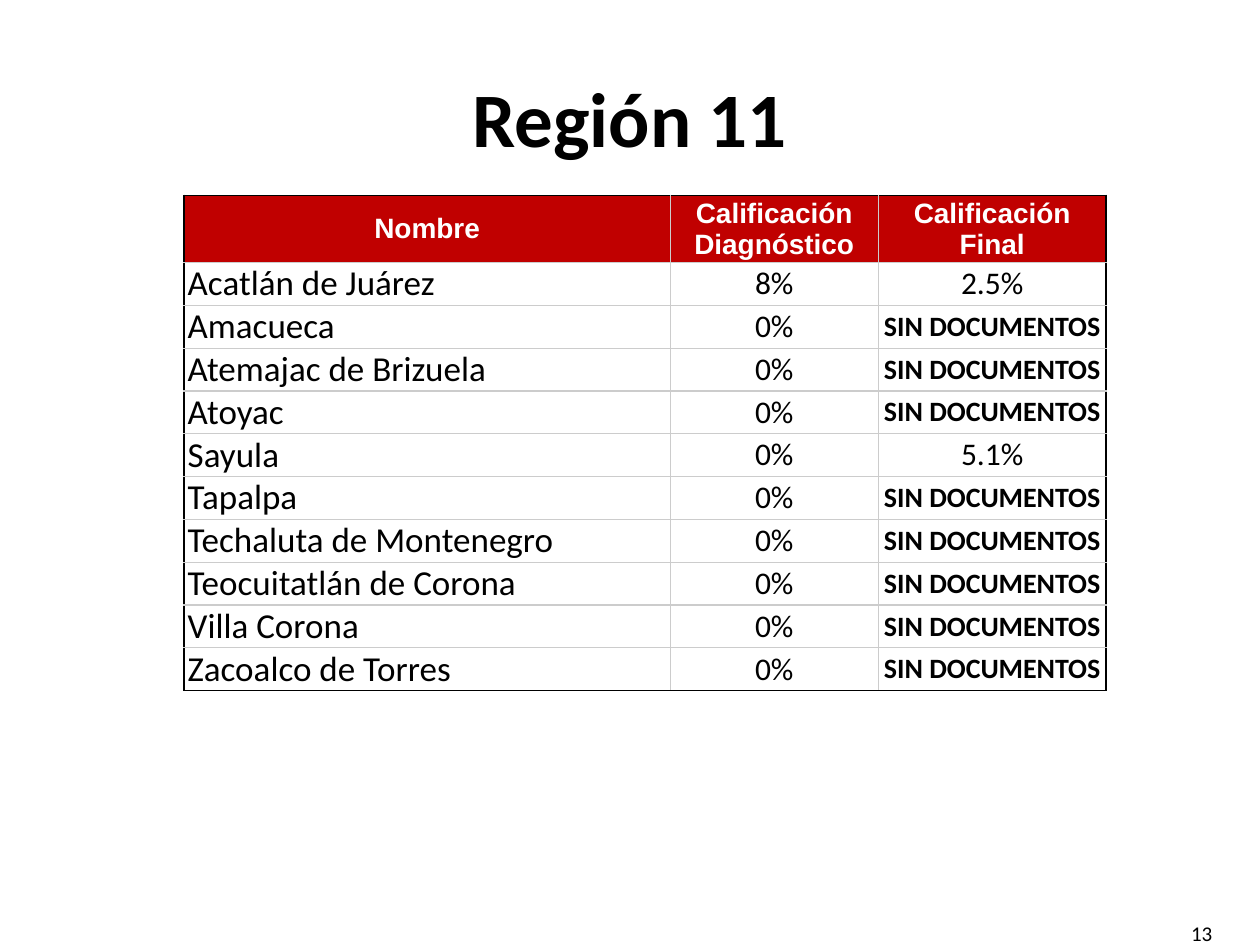
from lxml.etree import SubElement
from pptx import Presentation
from pptx.dml.color import RGBColor
from pptx.enum.text import MSO_ANCHOR, PP_ALIGN
from pptx.oxml.ns import qn
from pptx.util import Inches, Pt

WIDTH, HEIGHT = 10, 7.5
BLACK, WHITE, RED, GRAY = "000000", "FFFFFF", "C00000", "CCCCCC"
HEADINGS = ["Nombre", "Calificación Diagnóstico", "Calificación Final"]
MISSING = "SIN DOCUMENTOS"
TOWNS = [
    ("Acatlán de Juárez", "8%", "2.5%"),
    ("Amacueca", "0%", MISSING),
    ("Atemajac de Brizuela", "0%", MISSING),
    ("Atoyac", "0%", MISSING),
    ("Sayula", "0%", "5.1%"),
    ("Tapalpa", "0%", MISSING),
    ("Techaluta de Montenegro", "0%", MISSING),
    ("Teocuitatlán de Corona", "0%", MISSING),
    ("Villa Corona", "0%", MISSING),
    ("Zacoalco de Torres", "0%", MISSING),
]
COLUMN_WIDTHS = [3.86, 1.65, 1.81]
HEADER_HEIGHT, ROW_HEIGHT = 0.49, 0.34


def color(value):
    return RGBColor.from_string(value)


def place(box, left, top, width, height):
    box.left, box.top = Inches(left), Inches(top)
    box.width, box.height = Inches(width), Inches(height)


def write(frame, text, size, align, bold=False, ink=BLACK, font="Calibri"):
    frame.word_wrap = True
    para = frame.paragraphs[0]
    para.alignment = align
    span = para.add_run()
    span.text = text
    span.font.name, span.font.size, span.font.bold = font, Pt(size), bold
    span.font.color.rgb = color(ink)


def add_title(page, left, top, width, height):
    title = page.shapes.title
    place(title, left, top, width, height)
    title.text_frame.vertical_anchor = MSO_ANCHOR.MIDDLE
    write(title.text_frame, "Región 11", 44, PP_ALIGN.CENTER, bold=True)


def set_borders(cell, outer_sides):
    """Draw the outer sides in black and the inner ones in thin gray."""
    properties = cell._tc.get_or_add_tcPr()
    for side in "LRTB":
        ink, weight = (BLACK, 1) if side in outer_sides else (GRAY, 0.75)
        line = SubElement(properties, qn(f"a:ln{side}"), w=str(Pt(weight)))
        fill = SubElement(line, qn("a:solidFill"))
        SubElement(fill, qn("a:srgbClr"), val=ink)


def format_cell(cell, text, row, column, last_row):
    edges = {"L": column == 0, "R": column == len(HEADINGS) - 1,
             "T": row == 0, "B": row == last_row}
    set_borders(cell, [side for side, outer in edges.items() if outer])
    cell.fill.solid()
    cell.fill.fore_color.rgb = color(WHITE if row else RED)
    cell.vertical_anchor = MSO_ANCHOR.MIDDLE
    cell.margin_left = cell.margin_right = Inches(0.03)
    cell.margin_top = cell.margin_bottom = 0
    if row == 0:
        write(cell.text_frame, text, 16, PP_ALIGN.CENTER, True, WHITE, "Arial")
    elif column == 0:
        write(cell.text_frame, text, 20, PP_ALIGN.LEFT)
    elif text == MISSING:
        write(cell.text_frame, text, 16, PP_ALIGN.CENTER, bold=True)
    else:
        write(cell.text_frame, text, 18, PP_ALIGN.CENTER)


def add_grades(page, left, top):
    records = [HEADINGS, *TOWNS]
    heights = [HEADER_HEIGHT] + [ROW_HEIGHT] * len(TOWNS)
    table = page.shapes.add_table(
        len(records), len(HEADINGS), Inches(left), Inches(top),
        Inches(sum(COLUMN_WIDTHS)), Inches(sum(heights))).table
    table.horz_banding = table.first_row = False
    for column, width in zip(table.columns, COLUMN_WIDTHS):
        column.width = Inches(width)
    for row, (record, height) in enumerate(zip(records, heights)):
        table.rows[row].height = Inches(height)
        for column, text in enumerate(record):
            format_cell(table.cell(row, column), text, row, column, len(TOWNS))


def add_page_number(page, left, top, width, height):
    box = page.shapes.add_textbox(0, 0, 0, 0)
    place(box, left, top, width, height)
    box.text_frame.vertical_anchor = MSO_ANCHOR.MIDDLE
    write(box.text_frame, "13", 12, PP_ALIGN.RIGHT)


def main():
    deck = Presentation()
    deck.slide_width, deck.slide_height = Inches(WIDTH), Inches(HEIGHT)
    page = deck.slides.add_slide(deck.slide_layouts[5])
    add_page_number(page, 7.39, 7.21, 2.33, 0.4)
    add_grades(page, 1.46, 1.55)
    add_title(page, WIDTH * 0.05, HEIGHT * 0.04, WIDTH * 0.9, HEIGHT / 6)
    deck.save("out.pptx")


if __name__ == "__main__":
    main()
